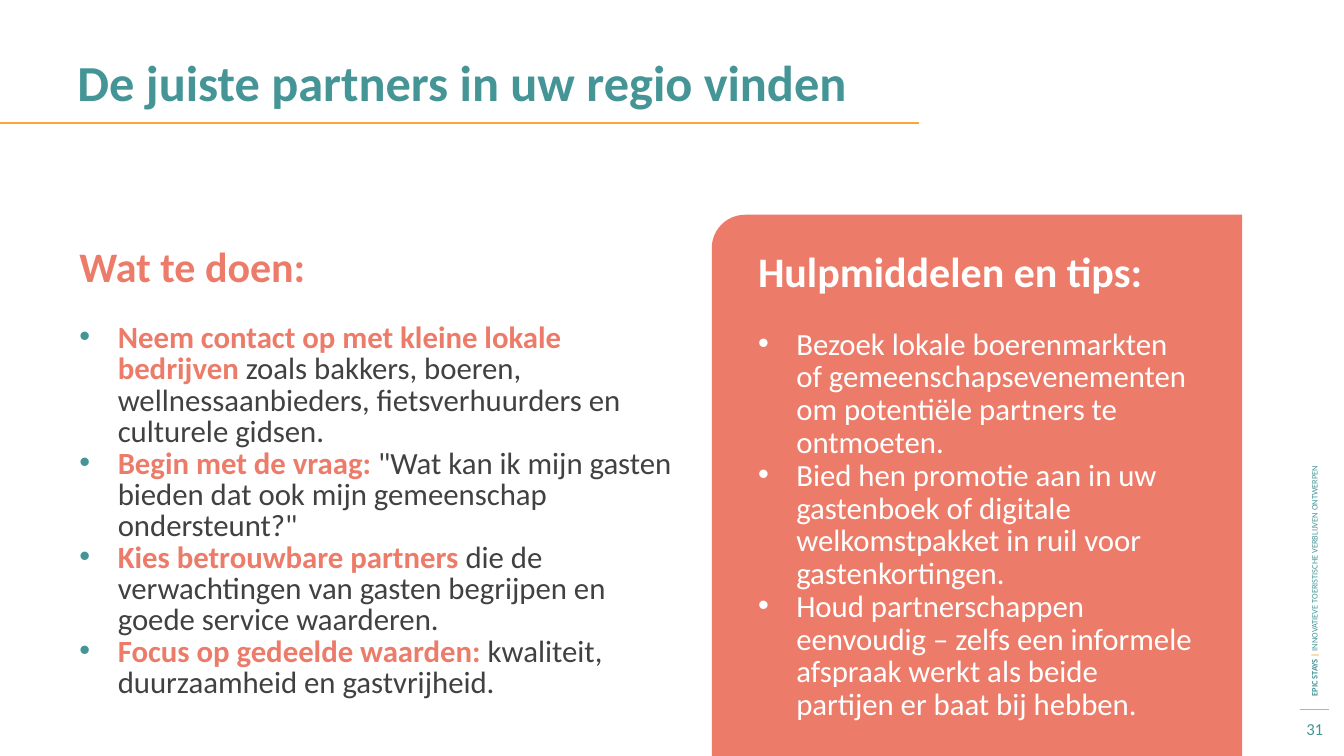
from lxml import etree
from pptx import Presentation
from pptx.dml.color import RGBColor
from pptx.enum.shapes import MSO_CONNECTOR, MSO_SHAPE
from pptx.enum.text import MSO_ANCHOR, PP_ALIGN
from pptx.oxml.ns import qn
from pptx.util import Inches, Pt

STRAIGHT = MSO_CONNECTOR.STRAIGHT
ROUND_CORNER = MSO_SHAPE.ROUND_1_RECTANGLE
TOP, MIDDLE = MSO_ANCHOR.TOP, MSO_ANCHOR.MIDDLE
LEFT, CENTER = PP_ALIGN.LEFT, PP_ALIGN.CENTER

FONT = "Calibri"
COLORS = {
    "teal": "459597",
    "orange": "FBA63B",
    "coral": "EC7C69",
    "dark": "414141",
    "white": "FFFFFF",
}
TITLE = "De juiste partners in uw regio vinden"
ACTIONS_HEADING = "Wat te doen:"
ACTIONS = [
    ("Neem contact op met kleine lokale bedrijven ",
     "zoals bakkers, boeren, wellnessaanbieders, fietsverhuurders en culturele gidsen."),
    ("Begin met de vraag: ",
     '"Wat kan ik mijn gasten bieden dat ook mijn gemeenschap ondersteunt?"'),
    ("Kies betrouwbare partners ",
     "die de verwachtingen van gasten begrijpen en goede service waarderen."),
    ("Focus op gedeelde waarden: ", "kwaliteit, duurzaamheid en gastvrijheid."),
]
TIPS_HEADING = "Hulpmiddelen en tips:"
TIPS = [
    "Bezoek lokale boerenmarkten of gemeenschapsevenementen om potentiële partners te ontmoeten.",
    "Bied hen promotie aan in uw gastenboek of digitale welkomstpakket in ruil voor gastenkortingen.",
    "Houd partnerschappen eenvoudig – zelfs een informele afspraak werkt als beide partijen er baat bij hebben.",
]
FOOTER = [
    ("EPIC STAYS ", "teal", True),
    ("| ", "orange", True),
    ("INNOVATIEVE TOERISTISCHE VERBLIJVEN ONTWERPEN", "teal", False),
]
PAGE_NUMBER = "31"
RULES = [
    ((12.89, 7.04), (13.18, 7.04), 0.75),
    ((0, 1.22), (9.11, 1.22), 1.5),
]
PANEL = (7.06, 2.13, 5.26, 5.37)
CORNER_RADIUS = 0.33
BULLET_INDENT = 0.38


def rgb(name):
    return RGBColor.from_string(COLORS[name])


def add_bullet(para, color):
    props = para._p.get_or_add_pPr()
    props.set("marL", str(Inches(BULLET_INDENT)))
    props.set("indent", str(-Inches(BULLET_INDENT)))
    bullet_color = etree.SubElement(props, qn("a:buClr"))
    etree.SubElement(bullet_color, qn("a:srgbClr")).set("val", COLORS[color])
    etree.SubElement(props, qn("a:buFont")).set("typeface", "Arial")
    etree.SubElement(props, qn("a:buChar")).set("char", "•")


def add_text(page, paragraphs, at, size, spacing=None, anchor=TOP,
             align=LEFT, bullet=None, rotation=0, frame=None):
    if frame is None:
        box = page.shapes.add_textbox(*map(Inches, at))
        box.rotation = rotation
        frame = box.text_frame
        frame.word_wrap = True
        frame.vertical_anchor = anchor
    for spans in paragraphs:
        para = frame.paragraphs[0] if not frame.text else frame.add_paragraph()
        if bullet:
            add_bullet(para, bullet)
        para.alignment = align
        if spacing:
            para.line_spacing = Pt(spacing)
        for text, color, bold in spans:
            span = para.add_run()
            span.text = text
            span.font.name = FONT
            span.font.size = Pt(size)
            span.font.bold = bold
            span.font.color.rgb = rgb(color)
    return frame


def add_rule(page, start, end, width):
    rule = page.shapes.add_connector(STRAIGHT, *map(Inches, start + end))
    rule.line.color.rgb = rgb("orange")
    rule.line.width = Pt(width)
    etree.SubElement(rule._element.spPr, qn("a:effectLst"))


def add_panel(page):
    left, top, width, height = PANEL
    shift = (height - width) / 2
    panel = page.shapes.add_shape(
        ROUND_CORNER, Inches(left - shift), Inches(top + shift), Inches(height), Inches(width))
    panel.rotation = 270
    panel.adjustments[0] = CORNER_RADIUS / width
    panel.shadow.inherit = False
    panel.fill.solid()
    panel.fill.fore_color.rgb = rgb("coral")
    panel.line.fill.background()


def main():
    deck = Presentation()
    deck.slide_width, deck.slide_height = Inches(13.33), Inches(7.5)
    page = deck.slides.add_slide(deck.slide_layouts[6])

    for start, end, width in RULES:
        add_rule(page, start, end, width)
    add_text(page, [FOOTER], (10.15, 4.02, 5.77, 0.2), 6, anchor=MIDDLE, rotation=270)
    add_text(page, [[(PAGE_NUMBER, "teal", False)]], (12.78, 7.06, 0.52, 0.34), 12,
             anchor=MIDDLE, align=CENTER)
    add_text(page, [[(TITLE, "teal", True)]], (0.67, 0.54, 12, 0.88), 36, spacing=37.2)

    add_text(page, [[(ACTIONS_HEADING, "coral", True)]], (0.69, 2.43, 6.14, 0.88), 30, spacing=29)
    actions = [[(lead, "coral", True), (rest, "dark", False)] for lead, rest in ACTIONS]
    add_text(page, actions, (0.69, 3.16, 6.14, 4), 22, spacing=22.4, bullet="teal")

    add_panel(page)
    tips_at = (7.42, 2.56, 4.54, 3.59)
    tips_frame = add_text(page, [[(TIPS_HEADING, "white", True)]], tips_at, 30, spacing=23.4)
    tips = [[(tip, "white", False)] for tip in TIPS]
    add_text(page, tips, tips_at, 22, spacing=23.4, bullet="white", frame=tips_frame)
    tips_frame.paragraphs[1].space_before = Pt(23.4)

    deck.save("out.pptx")


if __name__ == "__main__":
    main()
